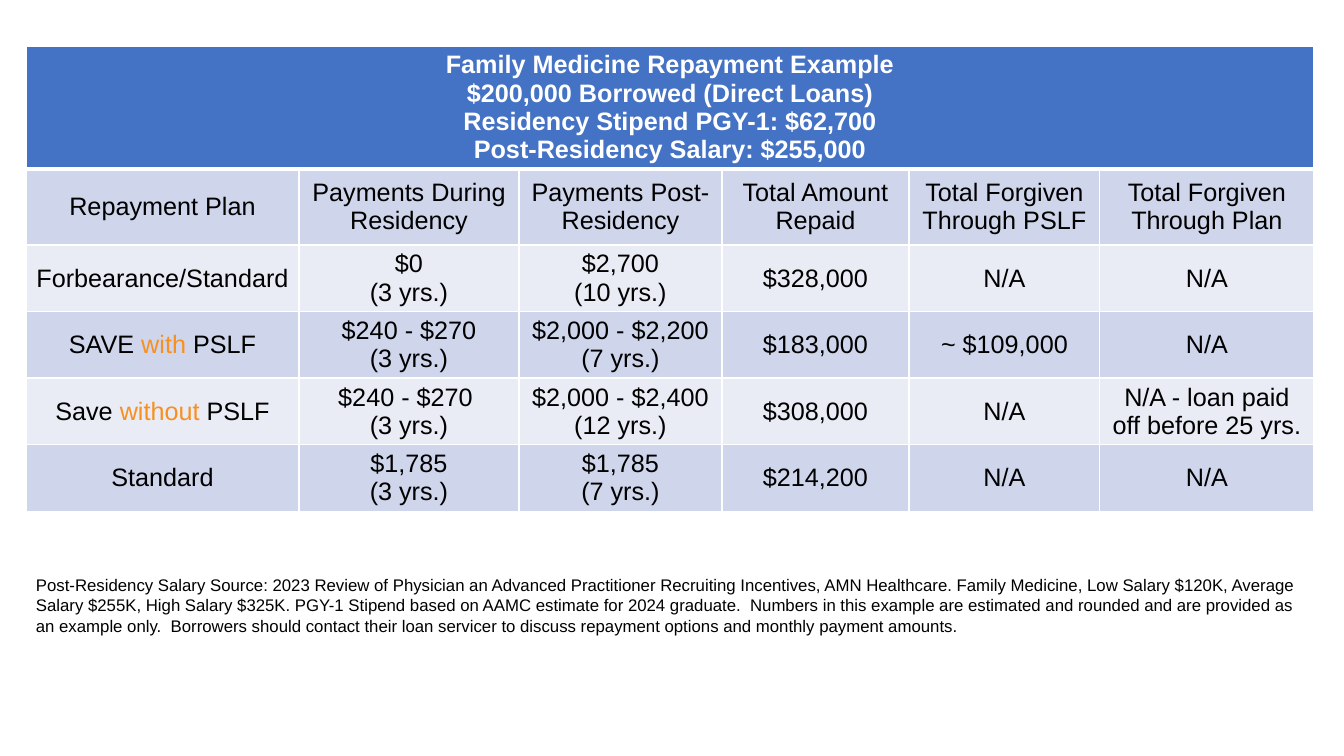
"""Build the family medicine loan repayment slide."""
from dataclasses import dataclass
from typing import Any

import lxml.etree
import pptx
import pptx.dml.color
import pptx.enum.text
import pptx.oxml.ns
import pptx.util

EMU_PER_PX = 914400 / 100.8
LEFT, WIDTH = 26, 1288
TABLE_TOP, NOTE_TOP, NOTE_HEIGHT = 46, 570, 72
COLUMNS = (273, 220, 203, 187, 191, 214)
CENTER = pptx.enum.text.PP_ALIGN.CENTER
MIDDLE = pptx.enum.text.MSO_ANCHOR.MIDDLE


@dataclass(frozen=True)
class Theme:
    font: str = "Arial"
    table_size: int = 18
    note_size: int = 12
    white: str = "FFFFFF"
    black: str = "000000"
    accent: str = "F7901E"
    header: str = "4472C4"
    bands: tuple[str, str] = ("CFD5EA", "E9EBF5")
    border: int = 1
    header_rule: int = 3


@dataclass(frozen=True)
class Row:
    height: int
    cells: tuple[str, ...]


THEME = Theme()
TITLE = Row(122, (
    "Family Medicine Repayment Example\n$200,000 Borrowed (Direct Loans)\n"
    "Residency Stipend PGY-1: $62,700\nPost-Residency Salary: $255,000",
))
ROWS = (
    Row(76, ("Repayment Plan", "Payments During Residency", "Payments Post-Residency",
             "Total Amount Repaid", "Total Forgiven Through PSLF",
             "Total Forgiven Through Plan")),
    Row(66, ("Forbearance/Standard", "$0\n(3 yrs.)", "$2,700\n(10 yrs.)",
             "$328,000", "N/A", "N/A")),
    Row(66, ("SAVE |with |PSLF", "$240 - $270\n(3 yrs.)", "$2,000 - $2,200\n(7 yrs.)",
             "$183,000", "~ $109,000", "N/A")),
    Row(66, ("Save |without| PSLF", "$240 - $270 \n(3 yrs.)", "$2,000 - $2,400\n(12 yrs.)",
             "$308,000", "N/A", "N/A - loan paid off before 25 yrs.")),
    Row(66, ("Standard", "$1,785\n(3 yrs.)", "$1,785\n(7 yrs.)",
             "$214,200", "N/A", "N/A")),
)
NOTE = (
    "Post-Residency Salary Source: 2023 Review of Physician an Advanced Practitioner "
    "Recruiting Incentives, AMN Healthcare. Family Medicine, Low Salary $120K, Average "
    "Salary $255K, High Salary $325K. PGY-1 Stipend based on AAMC estimate for 2024 "
    "graduate.  Numbers in this example are estimated and rounded and are provided as "
    "an example only.  Borrowers should contact their loan servicer to discuss repayment "
    "options and monthly payment amounts."
)


def px(value: int) -> pptx.util.Emu:
    """Convert whole pixels to EMU."""
    return pptx.util.Emu(round(value * EMU_PER_PX))


def rgb(color: str) -> pptx.dml.color.RGBColor:
    """Return a colour from its hex digits."""
    return pptx.dml.color.RGBColor.from_string(color)


def write(tf: Any, text: str, size: int, color: str, bold: bool = False,
          align: Any = None) -> None:
    """Write lines of text, with the accent colour between bars."""
    style = {"name": THEME.font, "size": pptx.util.Pt(size), "bold": bold}
    for i, line in enumerate(text.split("\n")):
        p = tf.paragraphs[0] if i == 0 else tf.add_paragraph()
        p.alignment = align
        for j, part in enumerate(line.split("|")):
            r = p.add_run()
            r.text = part
            for name, value in style.items():
                setattr(r.font, name, value)
            r.font.color.rgb = rgb(THEME.accent if j % 2 else color)


def paint(cell: Any, fill: str, top: int, bottom: int) -> None:
    """Give a cell white borders and a solid fill."""
    widths = {"lnL": THEME.border, "lnR": THEME.border, "lnT": top, "lnB": bottom}
    tc_pr = cell._tc.get_or_add_tcPr()
    qn = pptx.oxml.ns.qn
    for side, width in widths.items():
        ln = lxml.etree.SubElement(tc_pr, qn(f"a:{side}"), w=str(pptx.util.Pt(width)))
        solid = lxml.etree.SubElement(ln, qn("a:solidFill"))
        lxml.etree.SubElement(solid, qn("a:srgbClr"), val=THEME.white)
    cell.fill.solid()
    cell.fill.fore_color.rgb = rgb(fill)


def add_repayment_table(s: Any) -> None:
    """Add the table of repayment plans."""
    rows = (TITLE, *ROWS)
    height = sum(row.height for row in rows)
    table = s.shapes.add_table(len(rows), len(COLUMNS), px(LEFT), px(TABLE_TOP),
                               px(WIDTH), px(height)).table
    for column, width in zip(table.columns, COLUMNS):
        column.width = px(width)
    for i, row in enumerate(rows):
        table.rows[i].height = px(row.height)
        fill = THEME.bands[(i - 1) % 2] if i else THEME.header
        top = THEME.header_rule if i == 1 else THEME.border
        bottom = THEME.border if i else THEME.header_rule
        for cell in table.rows[i].cells:
            paint(cell, fill, top, bottom)
        for cell, text in zip(table.rows[i].cells, row.cells):
            if i:
                cell.vertical_anchor = MIDDLE
            write(cell.text_frame, text, THEME.table_size,
                  THEME.black if i else THEME.white, i == 0, CENTER)
    table.cell(0, 0).merge(table.cell(0, len(COLUMNS) - 1))


def add_note(s: Any) -> None:
    """Add the source note below the table."""
    sp = s.shapes.add_textbox(px(LEFT), px(NOTE_TOP), px(WIDTH), px(NOTE_HEIGHT))
    tf = sp.text_frame
    tf.word_wrap = True
    tf.auto_size = pptx.enum.text.MSO_AUTO_SIZE.SHAPE_TO_FIT_TEXT
    write(tf, NOTE, THEME.note_size, THEME.black)


def main() -> None:
    """Build and save the presentation."""
    prs = pptx.Presentation()
    prs.slide_width, prs.slide_height = px(1344), px(756)
    s = prs.slides.add_slide(prs.slide_layouts[6])
    add_repayment_table(s)
    add_note(s)
    prs.save("out.pptx")


if __name__ == "__main__":
    main()
